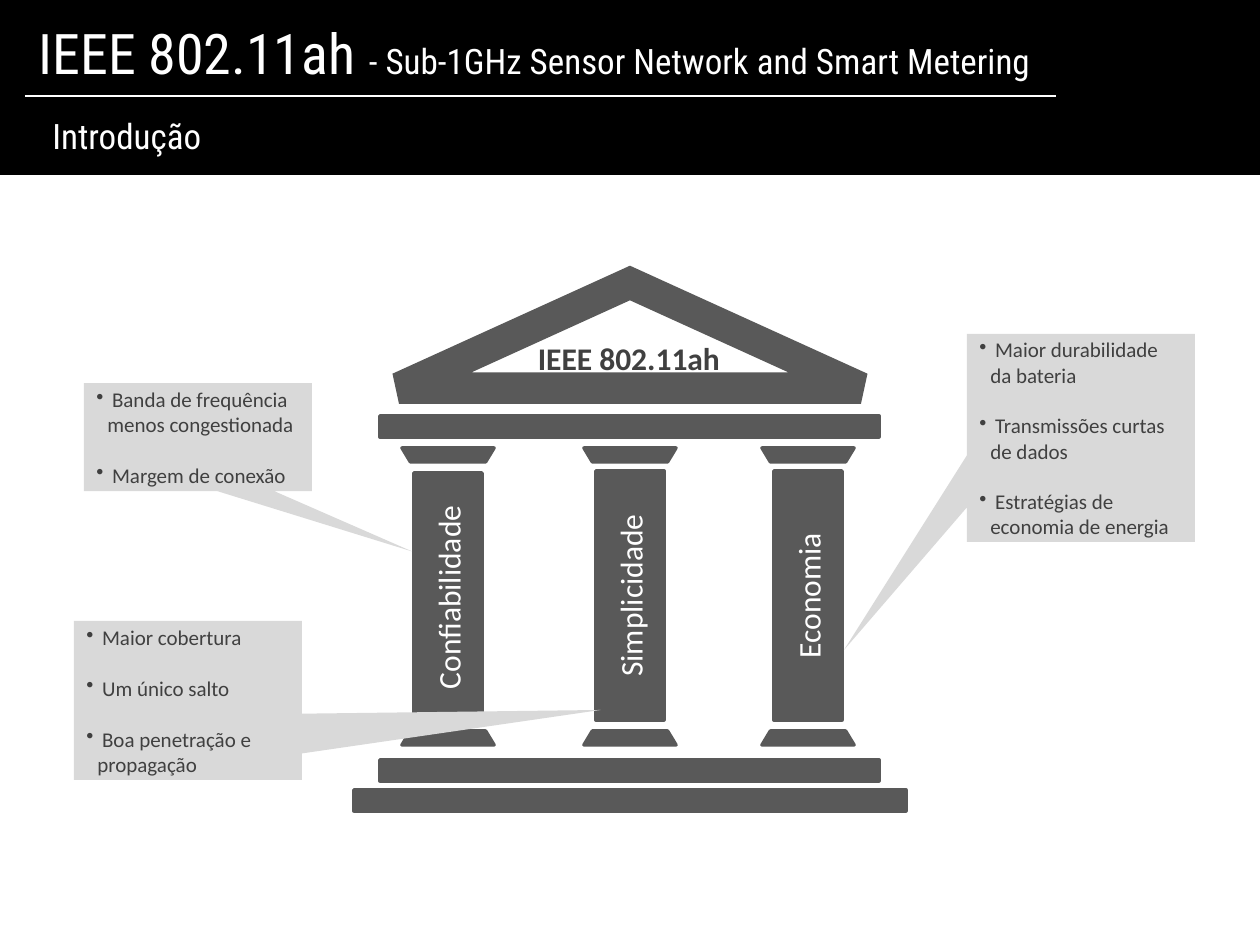
from dataclasses import dataclass

from lxml import etree
from pptx import Presentation
from pptx.dml.color import RGBColor
from pptx.enum.shapes import MSO_CONNECTOR, MSO_SHAPE
from pptx.enum.text import MSO_ANCHOR, PP_ALIGN
from pptx.oxml.ns import qn
from pptx.util import Pt

RECTANGLE = MSO_SHAPE.RECTANGLE
TRAPEZOID = MSO_SHAPE.TRAPEZOID
TRIANGLE = MSO_SHAPE.ISOSCELES_TRIANGLE
CALLOUT = MSO_SHAPE.RECTANGULAR_CALLOUT
STRAIGHT = MSO_CONNECTOR.STRAIGHT
MIDDLE = MSO_ANCHOR.MIDDLE
LEFT, CENTER = PP_ALIGN.LEFT, PP_ALIGN.CENTER

EMU_PER_PX = 914400 // 126


@dataclass(frozen=True)
class Theme:
    black: RGBColor = RGBColor(0x00, 0x00, 0x00)
    white: RGBColor = RGBColor(0xFF, 0xFF, 0xFF)
    stone: RGBColor = RGBColor(0x59, 0x59, 0x59)
    note: RGBColor = RGBColor(0xD9, 0xD9, 0xD9)
    ink: RGBColor = RGBColor(0x40, 0x40, 0x40)
    header_font: str = "Roboto Condensed"
    body_font: str = "Calibri"
    title_size: int = 32
    subtitle_size: int = 20
    label_size: int = 18
    note_size: int = 12
    stone_edge: int = 2
    roof_edge: int = 18


THEME = Theme()


@dataclass(frozen=True)
class Box:
    left: int
    top: int
    width: int
    height: int

    def emu(self) -> tuple[int, ...]:
        return tuple(map(px, (self.left, self.top, self.width, self.height)))


@dataclass(frozen=True)
class Pillar:
    label: str
    left: int
    shaft_top: int


@dataclass(frozen=True)
class Note:
    box: Box
    tip: tuple[float, float]
    points: tuple[str, ...]


ROOF = Box(399, 283, 462, 105)
ROOF_LABEL = Box(520, 333, 218, 50)
BEAMS = (Box(380, 416, 499, 21), Box(380, 760, 499, 21), Box(354, 790, 552, 21))
CAP_WIDTH, CAP_HEIGHT = 92, 14
CAPITAL_TOP, FOOT_TOP = 448, 731
SHAFT_WIDTH, SHAFT_HEIGHT = 68, 249

PILLARS = (
    Pillar("Confiabilidade", 402, 473),
    Pillar("Simplicidade", 584, 471),
    Pillar("Economia", 762, 471),
)
NOTES = (
    Note(Box(84, 383, 228, 108), (0.94, 1.06),
         ("Banda de frequência menos congestionada", "Margem de conexão")),
    Note(Box(967, 334, 228, 208), (-1.04, 1.02),
         ("Maior durabilidade da bateria", "Transmissões curtas de dados",
          "Estratégias de economia de energia")),
    Note(Box(74, 621, 228, 159), (1.81, 0.06),
         ("Maior cobertura", "Um único salto", "Boa penetração e propagação")),
)


def px(length: int) -> int:
    return length * EMU_PER_PX


def add_block(page, kind, box: Box, fill: RGBColor | None, edge: int = 0):
    """Add a flat shape; an edge width of 0 leaves it without outline."""
    shape = page.shapes.add_shape(kind, *box.emu())
    shape.shadow.inherit = False
    if fill is None:
        shape.fill.background()
    else:
        shape.fill.solid()
        shape.fill.fore_color.rgb = fill
    if edge:
        shape.line.color.rgb = THEME.stone
        shape.line.width = Pt(edge)
    else:
        shape.line.fill.background()
    return shape


def style(para, font: str, size: int, color: RGBColor, align=CENTER) -> None:
    para.alignment = align
    para.font.name = font
    para.font.size = Pt(size)
    para.font.color.rgb = color


def indent(para, margin: int, first: int = 0):
    properties = para._p.get_or_add_pPr()
    properties.set("marL", str(px(margin)))
    properties.set("indent", str(px(first)))
    return properties


def draw_header(page) -> None:
    band = add_block(page, RECTANGLE, Box(0, 0, 1260, 175), THEME.black)
    frame = band.text_frame
    frame.vertical_anchor = MIDDLE
    title, section = frame.paragraphs[0], frame.add_paragraph()
    for para, size, margin in ((title, THEME.title_size, 26),
                               (section, THEME.subtitle_size, 40)):
        style(para, THEME.header_font, size, THEME.white, LEFT)
        indent(para, margin)
    title.add_run().text = "IEEE 802.11ah "
    span = title.add_run()
    span.text = "- Sub-1GHz Sensor Network and Smart Metering"
    span.font.size = Pt(THEME.subtitle_size)
    section.text = "Introdução"
    section.space_before = Pt(16.4)

    rule = page.shapes.add_connector(STRAIGHT, px(25), px(96), px(1056), px(96))
    rule.line.color.rgb = THEME.white
    rule.line.width = Pt(0.75)
    etree.SubElement(rule._element.spPr, qn("a:effectLst"))


def draw_roof(page) -> None:
    roof = add_block(page, TRIANGLE, ROOF, None, THEME.roof_edge)
    miter = etree.SubElement(roof.line._get_or_add_ln(), qn("a:miter"))
    miter.set("lim", "800000")
    frame = page.shapes.add_textbox(*ROOF_LABEL.emu()).text_frame
    frame.word_wrap = True
    para = frame.paragraphs[0]
    para.text = "IEEE 802.11ah"
    style(para, THEME.body_font, THEME.label_size, THEME.ink)
    para.font.bold = True


def draw_pillar(page, pillar: Pillar) -> None:
    for top in (CAPITAL_TOP, FOOT_TOP):
        box = Box(pillar.left, top, CAP_WIDTH, CAP_HEIGHT)
        cap = add_block(page, TRAPEZOID, box, THEME.stone, THEME.stone_edge)
        cap.adjustments[0] = 0.6
        if top == CAPITAL_TOP:
            cap._element.spPr.xfrm.set("flipV", "1")
    inset = (CAP_WIDTH - SHAFT_WIDTH) // 2
    box = Box(pillar.left + inset, pillar.shaft_top, SHAFT_WIDTH, SHAFT_HEIGHT)
    shaft = add_block(page, RECTANGLE, box, THEME.stone, THEME.stone_edge)
    frame = shaft.text_frame
    frame.vertical_anchor = MIDDLE
    frame._txBody.bodyPr.set("vert", "vert270")
    para = frame.paragraphs[0]
    para.text = pillar.label
    style(para, THEME.body_font, THEME.label_size, THEME.white)


def draw_note(page, note: Note) -> None:
    shape = add_block(page, CALLOUT, note.box, THEME.note)
    shape.adjustments[0], shape.adjustments[1] = note.tip
    frame = shape.text_frame
    frame.vertical_anchor = MIDDLE
    for index, point in enumerate(note.points):
        para = frame.add_paragraph() if index else frame.paragraphs[0]
        para.text = f" {point}"
        style(para, THEME.body_font, THEME.note_size, THEME.ink, LEFT)
        if index:
            para.space_before = Pt(14.6)
        properties = indent(para, 11, -11)
        bullet = etree.Element(qn("a:buChar"), char="•")
        properties.find(qn("a:defRPr")).addprevious(bullet)


def main() -> None:
    deck = Presentation()
    deck.slide_width, deck.slide_height = px(1260), px(945)
    page = deck.slides.add_slide(deck.slide_layouts[6])
    draw_header(page)
    draw_roof(page)
    for beam in BEAMS:
        add_block(page, RECTANGLE, beam, THEME.stone, THEME.stone_edge)
    for pillar in PILLARS:
        draw_pillar(page, pillar)
    for note in NOTES:
        draw_note(page, note)
    deck.save("out.pptx")


if __name__ == "__main__":
    main()
